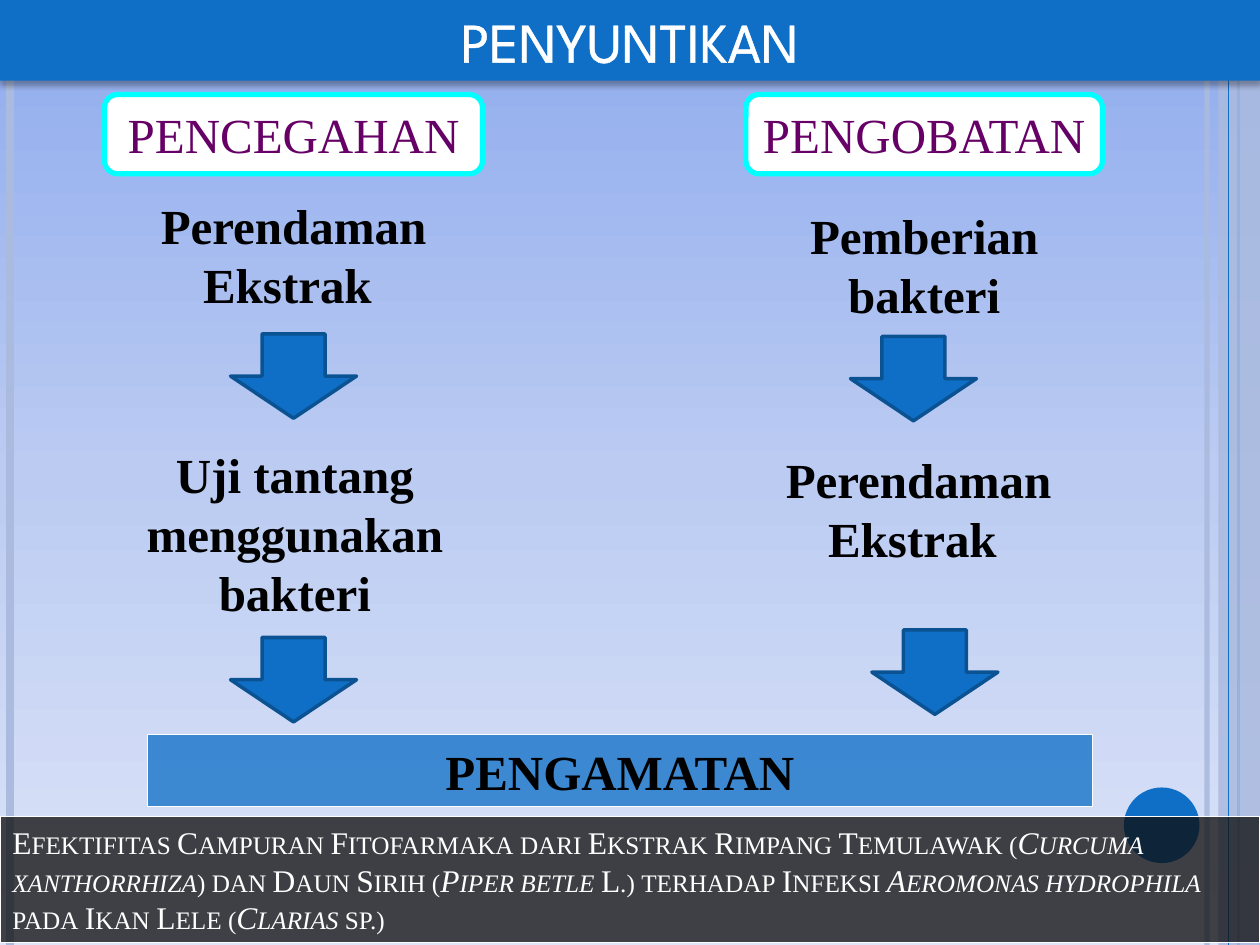
from copy import deepcopy
from dataclasses import dataclass

from lxml import etree
from pptx import Presentation
from pptx.dml.color import RGBColor
from pptx.enum.shapes import MSO_CONNECTOR, MSO_SHAPE
from pptx.enum.text import MSO_ANCHOR, MSO_AUTO_SIZE, PP_ALIGN
from pptx.oxml.ns import qn
from pptx.util import Inches, Pt

RECT = MSO_SHAPE.RECTANGLE
ROUNDED = MSO_SHAPE.ROUNDED_RECTANGLE
ARROW = MSO_SHAPE.DOWN_ARROW
OVAL = MSO_SHAPE.OVAL
STRAIGHT = MSO_CONNECTOR.STRAIGHT
CENTER, LEFT = PP_ALIGN.CENTER, PP_ALIGN.LEFT
MIDDLE, TOP = MSO_ANCHOR.MIDDLE, MSO_ANCHOR.TOP
FIXED_SIZE = MSO_AUTO_SIZE.NONE
TITLE_ONLY = 5


@dataclass(frozen=True)
class Theme:
    blue: str = "0F6FC6"
    dark_blue: str = "0B5292"
    pale_blue: str = "ABBBDF"
    cyan: str = "00FFFF"
    purple: str = "660066"
    white: str = "FFFFFF"
    black: str = "000000"
    charcoal: str = "0D0D0D"
    sky: tuple = ((0, "8EABEE"), (0.5, "BBCBF2"), (1, "DEE5F8"))
    title_font: str = "League Spartan"
    body_font: str = "Times New Roman"
    title_size: int = 32
    body_size: int = 28
    footer_size: int = 18


THEME = Theme()


def rgb(color):
    return RGBColor.from_string(color)


def set_alpha(properties, percent):
    color = properties.find(".//" + qn("a:srgbClr"))
    etree.SubElement(color, qn("a:alpha"), val=str(percent * 1000))


def paint(shape, fill, line=None, width=0.75, alpha=None):
    shape.fill.solid()
    shape.fill.fore_color.rgb = rgb(fill)
    if alpha:
        set_alpha(shape.element.spPr, alpha)
    if line:
        shape.line.color.rgb = rgb(line)
        shape.line.width = Pt(width)
    else:
        shape.line.fill.background()


def add_block(slide, kind, box, **look):
    block = slide.shapes.add_shape(kind, *map(Inches, box))
    block.shadow.inherit = False
    paint(block, **look)
    return block


def write(shape, pieces, align=CENTER, anchor=MIDDLE, **font):
    frame = shape.text_frame
    layout = {
        "word_wrap": True,
        "auto_size": FIXED_SIZE,
        "vertical_anchor": anchor,
        "margin_left": Inches(0.1),
        "margin_right": Inches(0.1),
        "margin_top": Inches(0.05),
        "margin_bottom": Inches(0.05),
    }
    for name, value in layout.items():
        setattr(frame, name, value)
    paragraph = frame.paragraphs[0]
    paragraph.alignment = align
    paragraph.line_spacing = 1.0
    style = {"name": THEME.body_font, "size": Pt(THEME.body_size), "bold": False}
    style.update(font)
    color = style.pop("color")
    for text, italic in pieces:
        run = paragraph.add_run()
        run.text = text
        for name, value in {**style, "italic": italic}.items():
            setattr(run.font, name, value)
        run.font.color.rgb = rgb(color)
    return paragraph.runs


def add_backdrop(slide, width, height):
    fill = slide.background.fill
    fill.gradient()
    fill.gradient_angle = 270
    stops = slide.element.find(".//" + qn("a:gsLst"))
    stops.insert(1, deepcopy(stops[0]))
    for stop, (position, color) in zip(fill.gradient_stops, THEME.sky):
        stop.position = position
        stop.color.rgb = rgb(color)

    def add_stripe(x, color, weight, alpha=None):
        stripe = slide.shapes.add_connector(
            STRAIGHT, Inches(x), 0, Inches(x), Inches(height))
        stripe.line.color.rgb = rgb(color)
        stripe.line.width = Pt(weight)
        if alpha:
            set_alpha(stripe.element.spPr, alpha)
        etree.SubElement(stripe.element.spPr, qn("a:effectLst"))

    add_stripe(width - 0.42, THEME.pale_blue, 3, 93)
    add_stripe(0.08, THEME.pale_blue, 4.5)
    add_stripe(width - 0.17, THEME.blue, 1.5)
    add_block(slide, RECT, (width - 0.33, 0, 0.33, height), fill=THEME.pale_blue, alpha=87)
    add_stripe(width - 0.25, THEME.blue, 0.75)
    add_block(slide, OVAL, (width - 1.08, height - 1.25, 0.6, 0.6), fill=THEME.blue)


def add_title(slide, box, text):
    title = slide.shapes.title
    title.left, title.top, title.width, title.height = map(Inches, box)
    title.element.getparent().append(title.element)
    paint(title, THEME.blue)
    effects = etree.SubElement(title.element.spPr, qn("a:effectLst"))
    shadow = etree.SubElement(
        effects, qn("a:outerShdw"), blurRad=str(Pt(3.5)), dist=str(Pt(2.2)),
        dir="5400000", rotWithShape="0")
    shade = etree.SubElement(shadow, qn("a:srgbClr"), val=THEME.black)
    etree.SubElement(shade, qn("a:alpha"), val="32000")
    run, = write(title, [(text, False)], name=THEME.title_font,
                 size=Pt(THEME.title_size), color=THEME.white)
    outline = etree.Element(qn("a:ln"), w=str(Pt(1.45)))
    outline_fill = etree.SubElement(outline, qn("a:solidFill"))
    etree.SubElement(outline_fill, qn("a:srgbClr"), val=THEME.white)
    run._r.get_or_add_rPr().insert(0, outline)


def add_procedure(slide, box, heading, steps, arrows):
    left, top, width, height = box
    header = add_block(slide, ROUNDED, box, fill=THEME.white, line=THEME.cyan, width=3)
    write(header, [(heading, False)], color=THEME.purple)
    for text, dx, dy, step_width, step_height in steps:
        step = slide.shapes.add_textbox(
            *map(Inches, (left + dx, top + dy, step_width, step_height)))
        write(step, [(text, False)], anchor=TOP, bold=True, color=THEME.black)
    for dx, dy in arrows:
        add_block(slide, ARROW, (left + dx, top + dy, 1, 0.67),
                  fill=THEME.blue, line=THEME.dark_blue, width=2)


def add_observation(slide, box, text):
    observation = add_block(slide, RECT, box, fill=THEME.blue, line=THEME.white, alpha=77)
    write(observation, [(text, False)], bold=True, color=THEME.black)


def add_footer(slide, box, pieces):
    footer = add_block(slide, RECT, box, fill=THEME.charcoal, line=THEME.white, alpha=76)
    for run in write(footer, pieces, align=LEFT, size=Pt(THEME.footer_size), color=THEME.white):
        run._r.get_or_add_rPr().set("cap", "small")


def main():
    deck = Presentation()
    deck.slide_width, deck.slide_height = Inches(10), Inches(7.5)
    slide = deck.slides.add_slide(deck.slide_layouts[TITLE_ONLY])
    add_backdrop(slide, 10, 7.5)
    add_title(slide, (0, 0, 10, 0.64), "PENYUNTIKAN")
    add_procedure(
        slide, (0.83, 0.75, 3, 0.63), "PENCEGAHAN",
        [("Perendaman Ekstrak ", 0.25, 0.75, 2.5, 1.38),
         ("Uji tantang menggunakan bakteri", 0.05, 2.73, 2.92, 1.85)],
        [(1, 1.9), (1, 4.31)])
    add_procedure(
        slide, (5.92, 0.75, 2.83, 0.63), "PENGOBATAN",
        [("Pemberian bakteri", 0.08, 0.83, 2.67, 1.04),
         ("Perendaman Ekstrak ", 0.08, 2.77, 2.58, 1.38)],
        [(0.83, 1.92), (1, 4.25)])
    add_observation(slide, (1.17, 5.83, 7.5, 0.57), "PENGAMATAN")
    add_footer(slide, (0, 6.48, 10, 1), [
        ("Efektifitas Campuran Fitofarmaka dari Ekstrak Rimpang Temulawak (", False),
        ("Curcuma xanthorrhiza", True),
        (") dan Daun Sirih (", False),
        ("Piper betle", True),
        (" L.) terhadap Infeksi ", False),
        ("Aeromonas hydrophila ", True),
        ("pada Ikan Lele (", False),
        ("Clarias", True),
        (" sp.)", False),
    ])
    deck.save("out.pptx")


if __name__ == "__main__":
    main()
